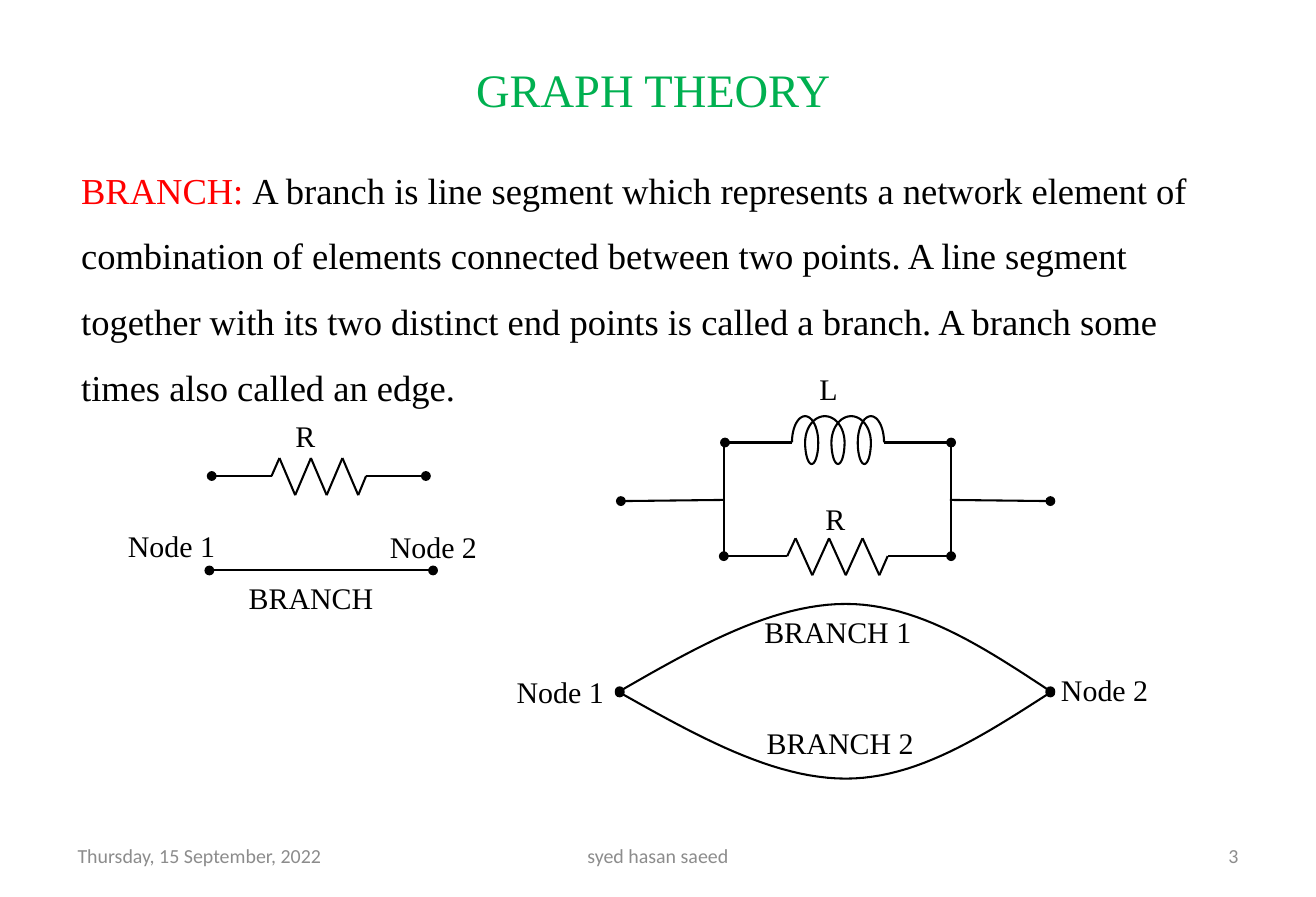
from math import cos, pi, sin
from pptx import Presentation, util as u
from pptx.dml.color import RGBColor
from pptx.enum import text as t, shapes as s
from pptx.oxml import parse_xml
from pptx.oxml.ns import nsdecls

hue = RGBColor.from_string
INK, GREY = "000000", "8C8C8C"
SERIF = {"name": "Times New Roman", "size": u.Pt(18)}
SMALL = {"name": "Calibri", "size": u.Pt(12)}

deck = Presentation()
deck.slide_width, deck.slide_height = u.Inches(11), u.Inches(7.5)
page = deck.slides.add_slide(deck.slide_layouts[6]).shapes


def write(runs, area, font, align=t.PP_ALIGN.LEFT, anchor=t.MSO_ANCHOR.TOP, gap=None):
    """Add a text box; runs are (words, colour) pairs of one paragraph."""
    frame = page.add_textbox(*map(u.Inches, area)).text_frame
    frame.word_wrap, frame.vertical_anchor = True, anchor
    para = frame.paragraphs[0]
    para.alignment, para.line_spacing = align, gap
    for words, tint in runs:
        run = para.add_run()
        run.text = words
        run.font.color.rgb = hue(tint)
        for key, val in font.items():
            setattr(run.font, key, val)


def ink(shape, dots=""):
    """Style an outline; dots holds "head" and/or "tail" for round ends."""
    shape.line.color.rgb = hue(INK)
    shape.line.width = u.Pt(1.25)
    for end in ("head", "tail"):
        if end in dots:
            shape.line._get_or_add_ln().append(
                parse_xml(f'<a:{end}End {nsdecls("a")} type="oval"/>'))
    shape._element.spPr.append(parse_xml(f'<a:effectLst {nsdecls("a")}/>'))


# Title, footer and definition
mid, left, right = t.PP_ALIGN.CENTER, t.PP_ALIGN.LEFT, t.PP_ALIGN.RIGHT
write([("GRAPH THEORY", "00B050")], (0.26, 0.39, 10.4, 0.7),
      {**SERIF, "size": u.Pt(28)}, mid, t.MSO_ANCHOR.MIDDLE)
for words, x, w, align in [("Thursday, 15 September, 2022", 0.55, 2.57, left),
                           ("syed hasan saeed", 3.76, 3.48, mid),
                           ("3", 7.88, 2.57, right)]:
    write([(words, GREY)], (x, 6.95, w, 0.4), SMALL, align, t.MSO_ANCHOR.MIDDLE)
write([("BRANCH: ", "FF0000"),
       ("A branch is line segment which represents a network element of combination "
        "of elements connected between two points. A line segment together with its "
        "two distinct end points is called a branch. A branch some times also called "
        "an edge.", INK)],
      (0.58, 1.17, 9.92, 2.32), {**SERIF, "size": u.Pt(22)}, gap=1.5)

# Straight wires: x1, y1, x2, y2, round ends
wires = [
    (1.75, 4.77, 3.62, 4.77, "head tail"),
    (6.62, 3.7, 6.06, 3.7, "tail"),
    (7.95, 3.7, 7.39, 3.7, "head"),
    (6.05, 3.7, 6.05, 4.65, ""),
    (7.95, 3.7, 7.95, 4.65, ""),
    (7.94, 4.18, 8.78, 4.19, "tail"),
    (6.05, 4.18, 5.19, 4.19, "tail"),
]
# Resistors: outer ends, zigzag ends, height of the wire
for start, first, last, stop, y in [(1.77, 2.27, 3.06, 3.56, 3.98),
                                    (6.05, 6.58, 7.42, 7.95, 4.65)]:
    step = (last - first) / 12
    zig = [(first, y)]
    zig += [(first + (2 * i + 1) * step, y + (0.16 if i % 2 else -0.15)) for i in range(6)]
    zig += [(last, y)]
    wires += [(start, y, first, y, "head"), (last, y, stop, y, "tail")]
    wires += [(*a, *b, "") for a, b in zip(zig, zig[1:])]
for *ends, dots in wires:
    ink(page.add_connector(s.MSO_CONNECTOR.STRAIGHT, *map(u.Inches, ends)), dots)

# Coil: wide half ellipses above the wire, narrow ones back below it
coil = []
turns = [6.62, 6.84, 6.73, 7.06, 6.95, 7.28, 7.17, 7.39]
for a, b in zip(turns, turns[1:]):
    tall = 0.22 if b > a else -0.18
    coil += [((a + b) / 2 - (b - a) / 2 * cos(pi * k / 24), 3.7 - tall * sin(pi * k / 24))
             for k in range(25)]
curves = [(coil, "")]

# Two arcs between the nodes, each of two cubic curves
xs = [(5.18, 5.82, 6.46, 7.07), (7.07, 7.67, 8.22, 8.78)]
for node, bend, peak in [(5.78, 5.41, 5.05), (5.79, 6.15, 6.51)]:
    arc = []
    for row, ys in zip(xs, [(node, bend, peak, peak), (peak, peak, bend, node)]):
        for k in range(25):
            f = k / 24
            mix = ((1 - f) ** 3, 3 * f * (1 - f) ** 2, 3 * f * f * (1 - f), f ** 3)
            arc.append(tuple(sum(m * v for m, v in zip(mix, p)) for p in (row, ys)))
    curves.append((arc, "head tail"))
for pts, dots in curves:
    pts = [(u.Inches(x), u.Inches(y)) for x, y in pts]
    pen = page.build_freeform(*pts[0])
    pen.add_line_segments(pts[1:], close=False)
    curve = pen.convert_to_shape()
    curve.fill.background()
    ink(curve, dots)

# Labels
for words, x, y, w in [("BRANCH", 1.98, 4.8, 1.41), ("BRANCH 1", 6.29, 5.08, 1.64),
                       ("BRANCH 2", 6.31, 6.01, 1.64), ("R", 2.37, 3.44, 0.63),
                       ("R", 6.8, 4.14, 0.63), ("L", 6.75, 3.05, 0.63),
                       ("Node 1", 0.97, 4.36, 1.25), ("Node 2", 3.16, 4.37, 1.25),
                       ("Node 2", 8.77, 5.57, 1.25), ("Node 1", 4.22, 5.58, 1.02)]:
    write([(words, INK)], (x, y, w, 0.4), SERIF)

deck.save("out.pptx")
